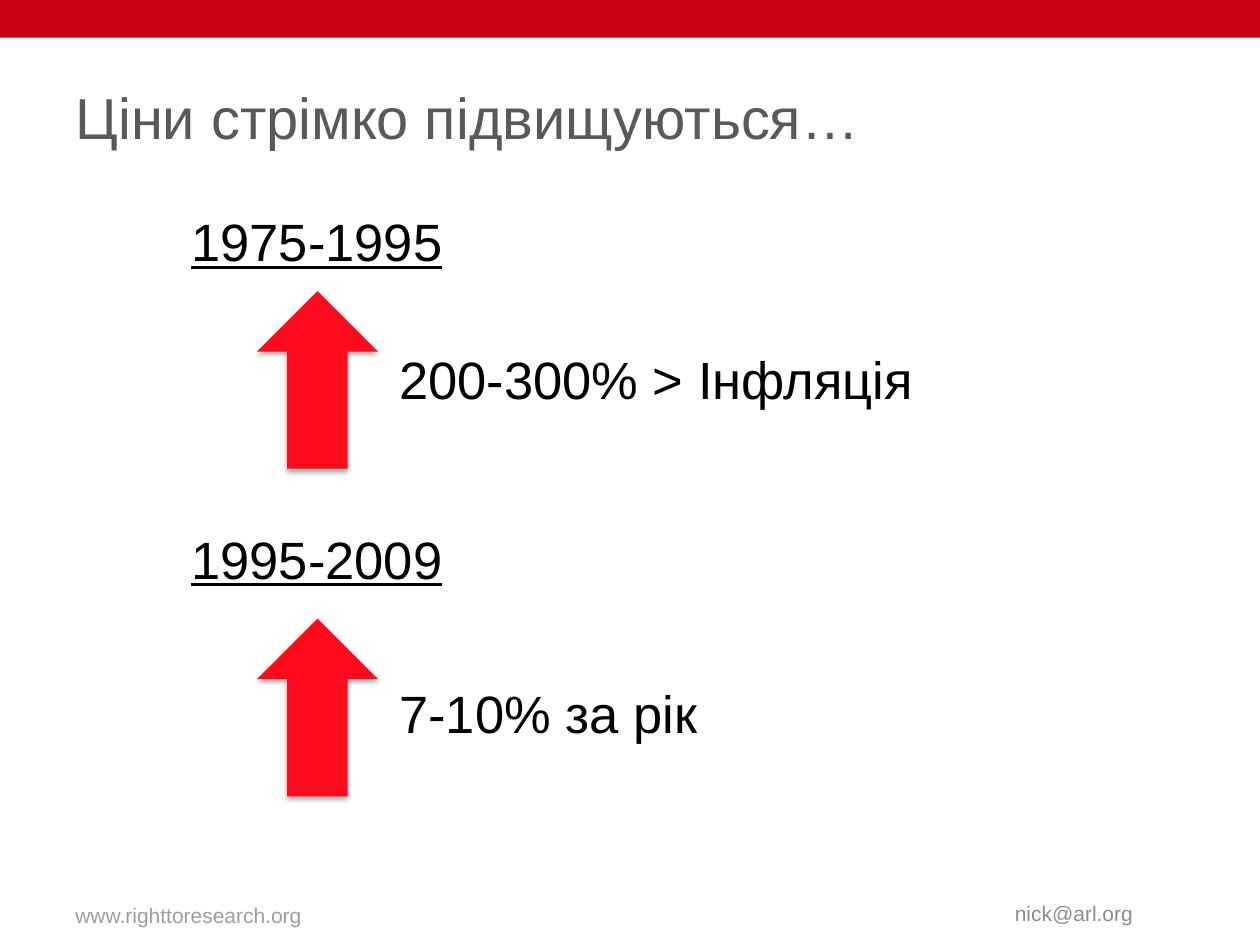
from lxml import etree
from pptx import Presentation, util as u
from pptx.dml.color import RGBColor
from pptx.enum import shapes, text
from pptx.oxml.ns import qn

prs = Presentation()
prs.slide_width, prs.slide_height = u.Inches(10), u.Inches(7.5)
s = prs.slides.add_slide(prs.slide_layouts[5])

# Grid of 20 columns by 15 rows
COL, ROW = prs.slide_width / 20, prs.slide_height / 15


def box(col, row, cols, rows):
    return [u.Emu(round(n)) for n in (col * COL, row * ROW, cols * COL, rows * ROW)]


def write(sp, words, size, color, anchor="MIDDLE", align="LEFT", underline=None):
    tf = sp.text_frame
    tf.text = words
    tf.word_wrap = True
    tf.vertical_anchor = text.MSO_ANCHOR[anchor]
    p = tf.paragraphs[0]
    p.alignment = text.PP_ALIGN[align]
    font = p.runs[0].font
    font.name, font.size, font.underline = "Arial", u.Pt(size), underline
    font.color.rgb = RGBColor.from_string(color)


# Top band
band = s.shapes.add_shape(shapes.MSO_SHAPE.RECTANGLE, *box(0, 0, 20, 0.6))
band.shadow.inherit = False
band.fill.solid()
band.fill.fore_color.rgb = RGBColor.from_string("C90015")
band.line.fill.background()

# Title
title = s.shapes.title
title.left, title.top, title.width, title.height = box(1, 0.6, 18, 2.5)
write(title, "Ціни стрімко підвищуються…", 33, "595959")

# Periods: heading, arrow and rate, each with its top row
periods = [
    ("1975-1995", 2.92, 4.62, "200-300% > Інфляція", 4.88),
    ("1995-2009", 7.96, 9.82, "7-10% за рік", 10.18),
]
for years, years_row, arrow_row, rate, rate_row in periods:
    heading = s.shapes.add_textbox(*box(1.14, years_row, 7.78, 1.8))
    write(heading, years, 30, "000000", align="CENTER", underline=True)

    arrow = s.shapes.add_shape(shapes.MSO_SHAPE.UP_ARROW, *box(4.08, arrow_row, 1.92, 2.82))
    arrow.fill.solid()
    arrow.fill.fore_color.rgb = RGBColor.from_string("FE0A1D")
    arrow.line.fill.background()
    arrow.shadow.inherit = False
    effects = arrow._element.spPr.find(qn("a:effectLst"))
    shadow = etree.SubElement(effects, qn("a:outerShdw"), blurRad=str(u.Pt(3.1)),
                              dist=str(u.Pt(1.8)), dir="5400000", rotWithShape="0")
    shade = etree.SubElement(shadow, qn("a:srgbClr"), val="000000")
    etree.SubElement(shade, qn("a:alpha"), val="35000")

    label = s.shapes.add_textbox(*box(6.14, rate_row, 9.78, 2.26))
    write(label, rate, 30, "000000")

# Footer
site = s.shapes.add_textbox(*box(1, 14.02, 6.34, 0.8))
write(site, "www.righttoresearch.org", 12, "A29D98", anchor="BOTTOM")
email = s.shapes.add_textbox(*box(14.4, 14, 3.78, 0.8))
write(email, "nick@arl.org", 12, "8C8C8C", anchor="BOTTOM", align="RIGHT")

prs.save("out.pptx")
